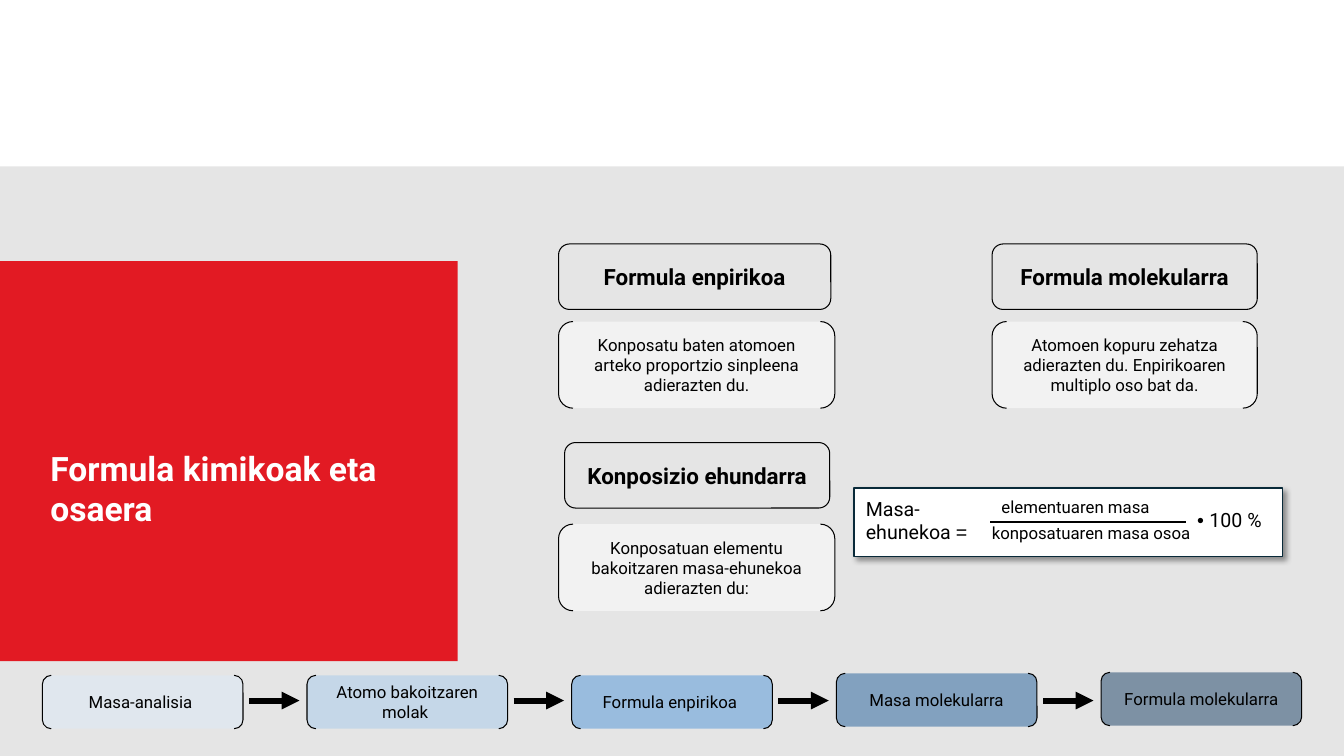
import pptx
import pptx.util
import pptx.dml.color
import pptx.enum.shapes
import pptx.enum.text
import pptx.oxml
import pptx.oxml.ns
from lxml import etree

Inches, Pt = pptx.util.Inches, pptx.util.Pt
SHAPE = pptx.enum.shapes.MSO_SHAPE
ALIGN = pptx.enum.text.PP_ALIGN
ANCHOR = pptx.enum.text.MSO_ANCHOR
qn = pptx.oxml.ns.qn

COLORS = {
    "white": "FFFFFF", "black": "000000", "band": "E5E5E5", "red": "E21A23",
    "navy": "092A39", "step1": "DCEAF7", "step2": "A6CAEC", "step3": "4E95D9",
    "step4": "215F9A", "step5": "163E64",
}


class SlideBuilder:
    def __init__(self, slide, font="Roboto"):
        self.slide = slide
        self.font = font

    def color(self, name):
        return pptx.dml.color.RGBColor.from_string(COLORS[name])

    def add_text(self, frame, runs, size, color="black", bold=False, align=ALIGN.LEFT):
        """Fill the frame with one paragraph; runs are (text, font) pairs."""
        frame.word_wrap = True
        paragraph = frame.paragraphs[0]
        paragraph.alignment = align
        for text, font in runs:
            run = paragraph.add_run()
            run.text = text
            run.font.name = font
            run.font.size = Pt(size)
            run.font.bold = bold
            run.font.color.rgb = self.color(color)

    def shape(self, kind, box, fill=None, line=None, width=0.75, alpha=None):
        shape = self.slide.shapes.add_shape(kind, *map(Inches, box))
        shape.shadow.inherit = False
        if fill:
            shape.fill.solid()
            shape.fill.fore_color.rgb = self.color(fill)
        else:
            shape.fill.background()
        if alpha:
            tint = shape.element.spPr.find(qn("a:solidFill"))[0]
            etree.SubElement(tint, qn("a:alpha"), val=str(alpha * 1000))
        if line:
            shape.line.color.rgb = self.color(line)
            shape.line.width = Pt(width)
        else:
            shape.line.fill.background()
        shape.text_frame.vertical_anchor = ANCHOR.MIDDLE
        return shape

    def title(self, text, box):
        frame = self.slide.shapes.add_textbox(*map(Inches, box)).text_frame
        self.add_text(frame, [(text, self.font)], 24, "white", True)
        frame.auto_size = pptx.enum.text.MSO_AUTO_SIZE.SHAPE_TO_FIT_TEXT

    def heading(self, text, box):
        heading = self.shape(SHAPE.ROUNDED_RECTANGLE, box, line="black")
        self.add_text(heading.text_frame, [(text, self.font)], 16, bold=True, align=ALIGN.CENTER)

    def bracket(self, text, box, fill="white"):
        bracket = self.shape(SHAPE.DOUBLE_BRACKET, box, fill, "black", alpha=50)
        self.add_text(bracket.text_frame, [(text, self.font)], 12, align=ALIGN.CENTER)

    def label(self, runs, size, box):
        label = self.shape(SHAPE.ROUNDED_RECTANGLE, box)
        self.add_text(label.text_frame, runs, size)

    def shadowed_panel(self, box):
        panel = self.shape(SHAPE.RECTANGLE, box, "white", "navy", 1.25)
        effects = panel.element.spPr.find(qn("a:effectLst"))
        shadow = etree.SubElement(
            effects, qn("a:outerShdw"), blurRad=str(Pt(4)), dist=str(Pt(3)),
            dir=str(45 * 60000), algn="tl", rotWithShape="0")
        tint = etree.SubElement(shadow, qn("a:srgbClr"), val=COLORS["black"])
        etree.SubElement(tint, qn("a:alpha"), val="40000")

    def line(self, x1, x2, y, width, arrow=False):
        line = self.slide.shapes.add_connector(
            pptx.enum.shapes.MSO_CONNECTOR.STRAIGHT, *map(Inches, (x1, y, x2, y)))
        line.line.color.rgb = self.color("black")
        line.line.width = Pt(width)
        properties = line.element.spPr
        if arrow:
            etree.SubElement(properties.find(qn("a:ln")), qn("a:tailEnd"), type="triangle")
        etree.SubElement(properties, qn("a:effectLst"))


def main():
    deck = pptx.Presentation()
    deck.slide_width, deck.slide_height = Inches(13.33), Inches(7.5)
    build = SlideBuilder(deck.slides.add_slide(deck.slide_layouts[6]))

    # Background band and title block
    build.shape(SHAPE.RECTANGLE, (0, 1.65, 13.33, 5.85), "band")
    build.shape(SHAPE.RECTANGLE, (0, 2.59, 4.54, 3.97), "red")
    build.title("Formula kimikoak eta osaera", (0.4, 4.39, 3.52, 0.91))

    # Concepts: heading, its left, top and width, then definition and its left, top and width
    concepts = [
        ("Formula enpirikoa", 5.54, 2.42, 2.7,
         "Konposatu baten atomoen arteko proportzio sinpleena adierazten du.", 5.54, 3.19, 2.74),
        ("Formula molekularra", 9.84, 2.42, 2.63,
         "Atomoen kopuru zehatza adierazten du. Enpirikoaren multiplo oso bat da.",
         9.84, 3.19, 2.63),
        ("Konposizio ehundarra", 5.6, 4.39, 2.63,
         "Konposatuan elementu bakoitzaren masa-ehunekoa adierazten du:", 5.54, 5.2, 2.74),
    ]
    for concept, x, y, width, definition, def_x, def_y, def_width in concepts:
        build.heading(concept, (x, y, width, 0.65))
        build.bracket(definition, (def_x, def_y, def_width, 0.86))

    # Mass percentage equation
    build.shadowed_panel((8.47, 4.84, 4.25, 0.68))
    build.label([("Masa-ehunekoa ", "Roboto"), ("=", "Arial")], 14, (8.47, 4.97, 1.42, 0.38))
    build.label([("elementuaren masa", "Roboto")], 12, (9.82, 4.88, 1.94, 0.3))
    build.label([("konposatuaren masa osoa", "Roboto")], 12, (9.72, 5.1, 2.56, 0.38))
    build.label([("• ", "Arial"), ("100 %", "Roboto")], 14, (11.76, 5.01, 1.03, 0.3))
    build.line(9.82, 11.76, 5.18, 1)

    # Process steps joined by arrows
    steps = [
        ("Masa-analisia ", 6.7), ("Atomo bakoitzaren molak ", 6.7),
        ("Formula enpirikoa ", 6.7), ("Masa molekularra", 6.68), ("Formula molekularra", 6.67),
    ]
    step_left, step_width = 0.42, 1.99
    step_pitch = (10.92 - step_left) / (len(steps) - 1)
    for index, (step, top) in enumerate(steps):
        left = step_left + index * step_pitch
        build.bracket(step, (left, top, step_width, 0.53), f"step{index + 1}")
        if index < len(steps) - 1:
            arrow_left = left + step_width + 0.06
            build.line(arrow_left, arrow_left + 0.5, 6.95, 4.25, arrow=True)

    deck.save("out.pptx")


if __name__ == "__main__":
    main()
